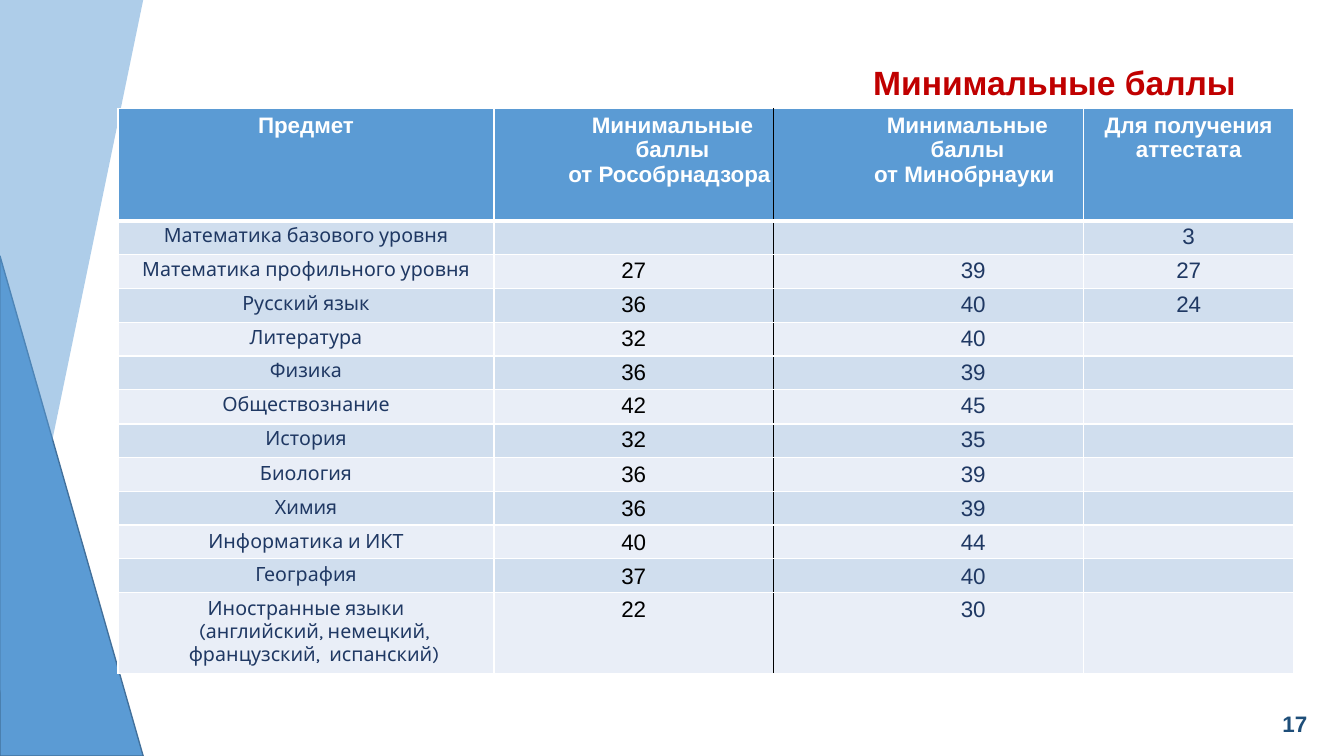
from dataclasses import dataclass

from pptx import Presentation
from pptx.dml.color import RGBColor
from pptx.enum.text import MSO_ANCHOR, PP_ALIGN
from pptx.oxml import parse_xml
from pptx.oxml.ns import nsdecls
from pptx.util import Inches, Pt


@dataclass(frozen=True)
class Theme:
    blue: str = "5B9BD4"
    edge: str = "42709B"
    red: str = "C00000"
    navy: str = "1F3863"
    deep: str = "1E4E79"
    white: str = "FFFFFF"
    black: str = "000000"
    bands: tuple = ("D0DEEE", "E9EEF7")
    sans: str = "Arial"
    soft: str = "Karla"
    head: int = 24
    base: int = 16
    small: int = 14


class Deck:
    def __init__(self, theme):
        self.theme = theme
        self.file = Presentation()
        self.file.slide_width = Inches(13.33)
        self.file.slide_height = Inches(7.5)
        self.slide = self.file.slides.add_slide(self.file.slide_layouts[5])

    def style(self, par, size, color, bold=False, face=None, align=PP_ALIGN.LEFT, left=0):
        font = par.font
        font.name = face or self.theme.sans
        font.size = Pt(size)
        font.bold = bold
        font.color.rgb = RGBColor.from_string(color)
        par.alignment = align
        if left:
            props = par._p.get_or_add_pPr()
            props.set("marL", str(Inches(left)))
            props.set("indent", "0")

    def frame(self, shape, text, size, color):
        body = shape.text_frame
        body.margin_left = body.margin_right = body.margin_top = body.margin_bottom = 0
        body.vertical_anchor = MSO_ANCHOR.TOP
        body.word_wrap = True
        body.text = text
        self.style(body.paragraphs[0], size, color, bold=True)

    def title(self, text, x, y, w, h):
        shape = self.slide.shapes.title
        shape.left, shape.top, shape.width, shape.height = map(Inches, (x, y, w, h))
        self.frame(shape, text, self.theme.head, self.theme.red)

    def label(self, text, x, y, w, h):
        shape = self.slide.shapes.add_textbox(*map(Inches, (x, y, w, h)))
        self.frame(shape, text, self.theme.base, self.theme.deep)

    def wedge(self, points, alpha=100, edge=None):
        start, *rest = [(Inches(x), Inches(y)) for x, y in points]
        path = self.slide.shapes.build_freeform(*start)
        path.add_line_segments(rest)
        shape = path.convert_to_shape()
        shape.shadow.inherit = False
        shape.fill.solid()
        shape.fill.fore_color.rgb = RGBColor.from_string(self.theme.blue)
        if alpha < 100:
            color = shape.fill._xPr.find(".//{*}srgbClr")
            color.append(parse_xml(f'<a:alpha {nsdecls("a")} val="{alpha * 1000}"/>'))
        if edge:
            shape.line.color.rgb = RGBColor.from_string(edge)
            shape.line.width = Pt(0.96)
        else:
            shape.line.fill.background()

    def border(self, cell, sides):
        props = cell._tc.get_or_add_tcPr()
        for spot, (side, (color, width)) in enumerate(sides.items()):
            line = parse_xml(
                f'<a:ln{side} {nsdecls("a")} w="{Pt(width)}"><a:solidFill>'
                f'<a:srgbClr val="{color}"/></a:solidFill></a:ln{side}>')
            props.insert(spot, line)

    def cell(self, cell, row, col, text):
        theme = self.theme
        top = row == 0
        cell.margin_left = cell.margin_right = cell.margin_bottom = 0
        cell.margin_top = Inches(0.04 if row < 8 else 0.05)
        cell.vertical_anchor = MSO_ANCHOR.TOP
        cell.fill.solid()
        fill = theme.blue if top else theme.bands[(row - 1) % 2]
        cell.fill.fore_color.rgb = RGBColor.from_string(fill)
        rules = {0: 3, 6: 1.5}
        self.border(cell, {
            "L": (theme.black if col == 2 else theme.white, 1),
            "R": (theme.black if col == 1 else theme.white, 1),
            "T": (theme.white, rules.get(row - 1, 1)),
            "B": (theme.white, rules.get(row, 1)),
        })
        if not text:
            end = cell.text_frame.paragraphs[0]._p.get_or_add_endParaRPr()
            end.set("sz", str(theme.small * 100))
            return
        cell.text = text
        for spot, par in enumerate(cell.text_frame.paragraphs):
            par.space_before = Pt(0 if spot else 3.2)
            if top:
                left = (0.71 if spot else 0.77) if col in (1, 2) else 0
                self.style(par, theme.base, theme.white, True, align=PP_ALIGN.CENTER, left=left)
            elif col == 0:
                self.style(par, theme.small, theme.navy, face=theme.soft,
                           align=PP_ALIGN.CENTER, left=0.16 * spot)
            elif col == 2:
                self.style(par, theme.base, theme.navy, left=1.86)
            else:
                color = theme.black if col == 1 else theme.navy
                self.style(par, theme.base, color, align=PP_ALIGN.CENTER)

    def table(self, data, x, y, cols, head, body, last):
        mid = len(data) - 2
        rows = [Inches(head)] + [Inches(body) // mid] * mid + [Inches(last)]
        shape = self.slide.shapes.add_table(
            len(data), len(cols), Inches(x), Inches(y), Inches(sum(cols)), sum(rows))
        grid = shape.table
        grid.first_row = grid.horz_banding = False
        for col, width in zip(grid.columns, cols):
            col.width = Inches(width)
        for row, height in zip(grid.rows, rows):
            row.height = height
        for row, line in enumerate(data):
            for col, text in enumerate(line):
                self.cell(grid.cell(row, col), row, col, text)


def main():
    theme = Theme()
    deck = Deck(theme)
    deck.wedge([(0, 2.54), (0, 7.5), (1.42, 7.5)], edge=theme.edge)
    deck.wedge([(1.42, 0), (0, 0), (0, 6.88)], alpha=49)
    deck.title("Минимальные баллы", 8.66, 0.61, 3.63, 0.43)
    deck.label("17", 12.72, 7.04, 0.33, 0.28)
    scores = [
        ("Предмет", "Минимальные баллы\nот Рособрнадзора",
         "Минимальные баллы\nот Минобрнауки", "Для получения аттестата"),
        ("Математика базового уровня", "", "", "3"),
        ("Математика профильного уровня", "27", "39", "27"),
        ("Русский язык", "36", "40", "24"),
        ("Литература", "32", "40", ""),
        ("Физика", "36", "39", ""),
        ("Обществознание", "42", "45", ""),
        ("История", "32", "35", ""),
        ("Биология", "36", "39", ""),
        ("Химия", "36", "39", ""),
        ("Информатика и ИКТ", "40", "44", ""),
        ("География", "37", "40", ""),
        ("Иностранные языки\n(английский, немецкий, французский,  испанский)", "22", "30", ""),
    ]
    deck.table(scores, 1.17, 1.08, (3.73, 2.77, 3.08, 2.08), 1.11, 3.69, 0.8)
    deck.file.save("out.pptx")


if __name__ == "__main__":
    main()
